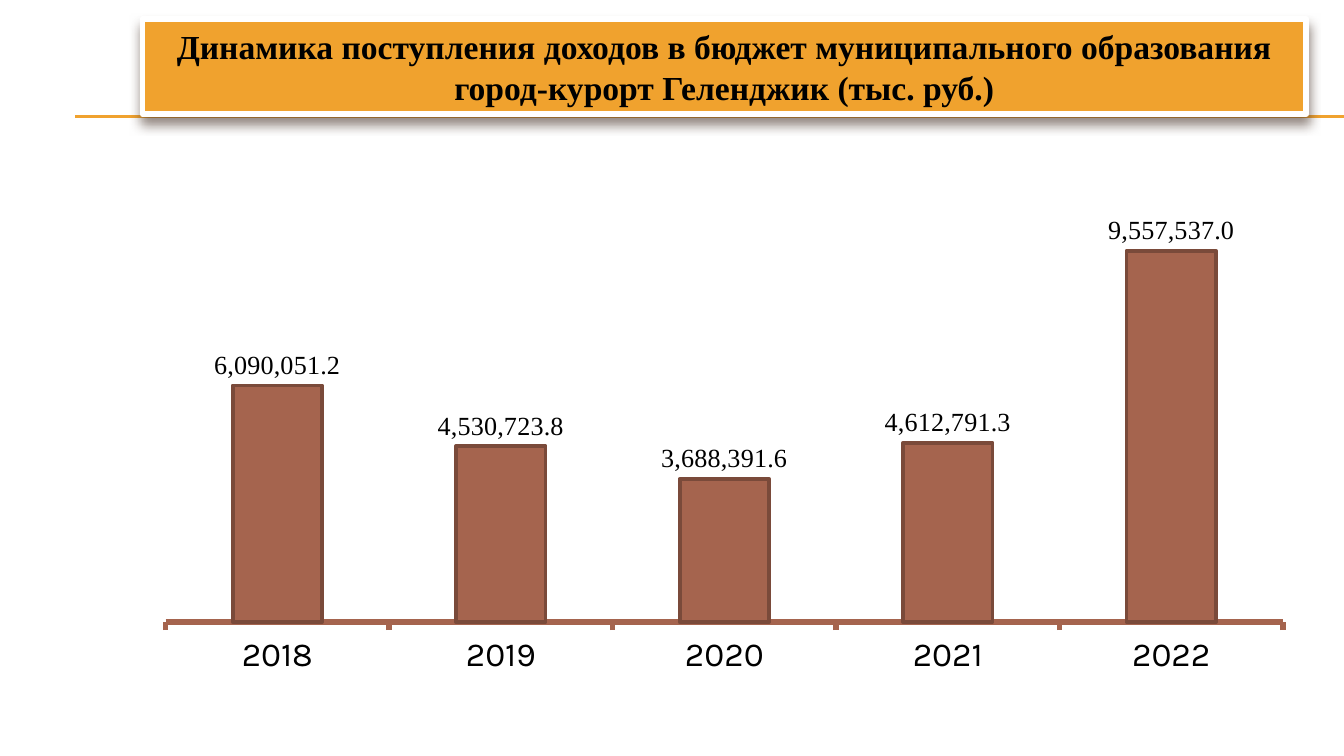
import lxml.etree
import pptx
import pptx.chart.data
import pptx.dml.color
import pptx.enum.chart
import pptx.enum.shapes
import pptx.enum.text
import pptx.oxml
import pptx.oxml.ns
import pptx.util

Inches, Pt = pptx.util.Inches, pptx.util.Pt
ORANGE, BROWN = "F0A22E", "A5644E"


def paint(fmt, color, width=None):
    """Give a fill, or a line of the given width in points, a solid colour."""
    fill = fmt if width is None else fmt.fill
    fill.solid()
    fill.fore_color.rgb = pptx.dml.color.RGBColor.from_string(color)
    if width is not None:
        fmt.width = Pt(width)


def set_font(font, **values):
    paint(font.fill, "000000")
    for name, value in values.items():
        setattr(font, name, value)


prs = pptx.Presentation()
prs.slide_width = Inches(10)
prs.slide_height = Inches(10 * 9 / 16)
s = prs.slides.add_slide(prs.slide_layouts[6])

# Rules under the title
for y in (0.86, 0.87):
    rule = s.shapes.add_connector(
        pptx.enum.shapes.MSO_CONNECTOR.STRAIGHT,
        Inches(0.56), Inches(y), Inches(10), Inches(y))
    paint(rule.line, ORANGE, 0.75)
    lxml.etree.SubElement(rule._element.spPr, pptx.oxml.ns.qn("a:effectLst"))

# Title banner
sp = s.shapes.add_shape(pptx.enum.shapes.MSO_SHAPE.RECTANGLE,
                        Inches(1.06), Inches(0.14), Inches(8.66), Inches(0.71))
paint(sp.fill, ORANGE)
paint(sp.line, "FFFFFF", 3)
sp.shadow.inherit = False
effects = sp._element.spPr.find(pptx.oxml.ns.qn("a:effectLst"))
effects.append(pptx.oxml.parse_xml(
    f'<a:outerShdw {pptx.oxml.ns.nsdecls("a")} blurRad="{Pt(6)}" dist="{Pt(4)}" '
    'dir="5400000" rotWithShape="0"><a:srgbClr val="4E3B30">'
    '<a:alpha val="60000"/></a:srgbClr></a:outerShdw>'))
tf = sp.text_frame
tf.word_wrap = True
tf.vertical_anchor = pptx.enum.text.MSO_ANCHOR.MIDDLE
p = tf.paragraphs[0]
p.alignment = pptx.enum.text.PP_ALIGN.CENTER
r = p.add_run()
r.text = ("Динамика поступления доходов в бюджет муниципального образования "
          "город-курорт Геленджик (тыс. руб.)")
set_font(r.font, name="Times New Roman", size=Pt(18), bold=True)

# Revenue by year
data = pptx.chart.data.CategoryChartData(number_format="#,##0.00")
data.categories = ["2018", "2019", "2020", "2021", "2022"]
data.add_series("Series 1", [6090051.2, 4530723.8, 3688391.6, 4612791.3, 9557537])
chart = s.shapes.add_chart(
    pptx.enum.chart.XL_CHART_TYPE.COLUMN_CLUSTERED,
    Inches(1.06), Inches(1.08), Inches(8.66), Inches(4.02), data).chart
chart.has_legend = False
chart.has_title = False
set_font(chart.font, name="Karla", size=Pt(18))

axis = chart.category_axis
axis.major_tick_mark = pptx.enum.chart.XL_TICK_MARK.OUTSIDE
paint(axis.format.line, BROWN, 3)
set_font(axis.tick_labels.font, name="Karla", size=Pt(18))

axis = chart.value_axis
for name, value in dict(visible=False, has_major_gridlines=False,
                        minimum_scale=0, maximum_scale=12000000).items():
    setattr(axis, name, value)

plot = chart.plots[0]
plot.gap_width = 150
plot.vary_by_categories = False
series = plot.series[0]
paint(series.format.fill, BROWN)
paint(series.format.line, "7A4A3A", 2)
labels = series.data_labels
for name, value in dict(
        show_value=True, number_format="#,##0.0", number_format_is_linked=False,
        position=pptx.enum.chart.XL_LABEL_POSITION.OUTSIDE_END).items():
    setattr(labels, name, value)
set_font(labels.font, name="Times New Roman", size=Pt(14))

prs.save("out.pptx")
